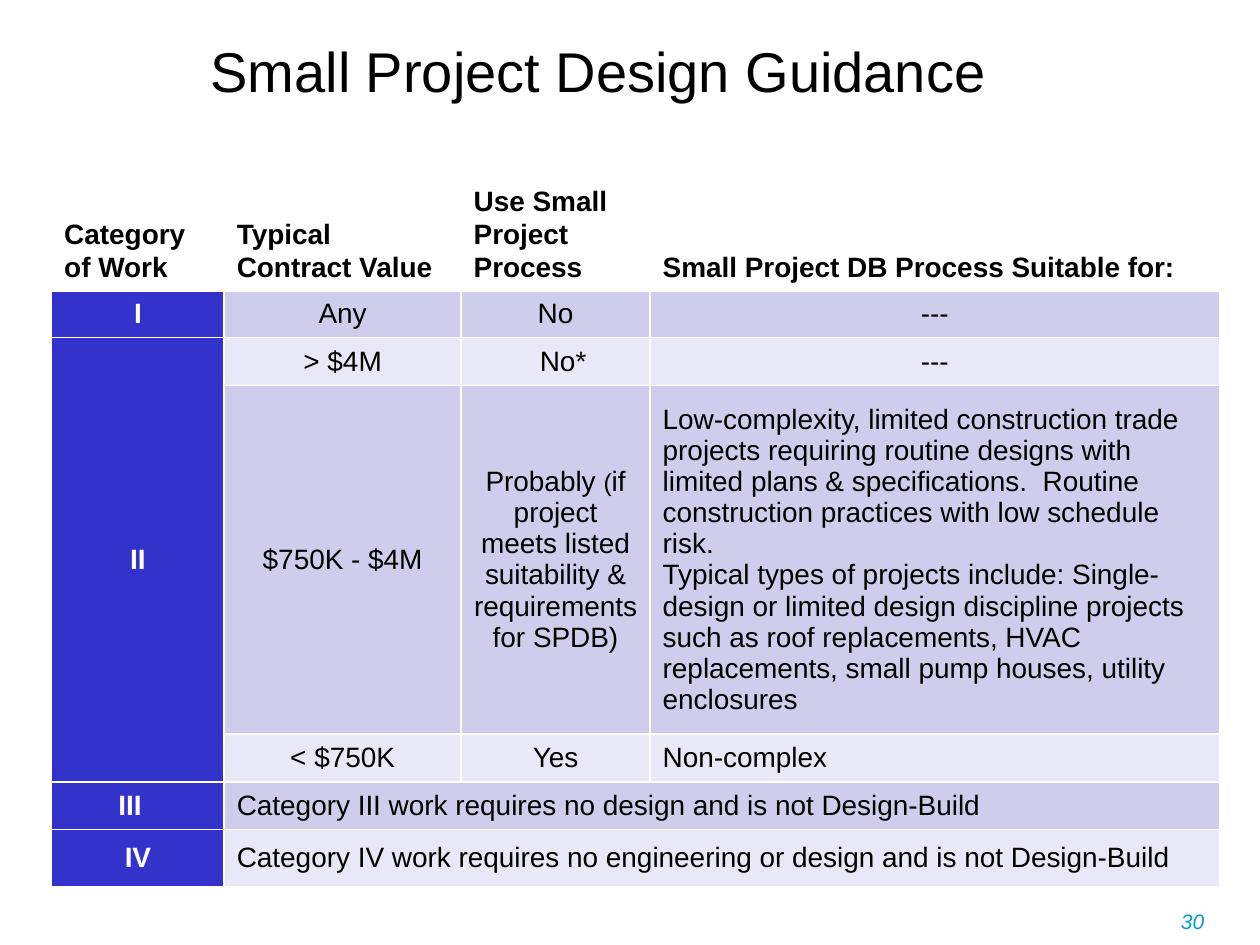
from lxml import etree
from pptx import Presentation
from pptx.dml.color import RGBColor as Rgb
from pptx.enum.text import MSO_ANCHOR as Anchor, PP_ALIGN as Align
from pptx.oxml.ns import qn
from pptx.util import Inches, Pt

BLACK = Rgb(0, 0, 0)
WHITE = Rgb(255, 255, 255)
BLUE = Rgb(0x33, 0x33, 0xCC)
DARK = Rgb(0xCE, 0xCE, 0xEC)
LIGHT = Rgb(0xE8, 0xE8, 0xF6)
CYAN = Rgb(0x00, 0x9E, 0xD5)

COLS = [1.37, 1.88, 1.5, 4.52]
ROWS = [0.97, 0.38, 0.38, 2.43, 0.38, 0.38, 0.45]
HEADS = ["Category of Work", "Typical Contract Value",
         "Use Small Project Process", "Small Project DB Process Suitable for:"]
PROBABLY = [["Probably ", ("(", 14),
             "if project meets listed suitability & requirements for SPDB)"]]
SUITABLE = [
    "Low-complexity, limited construction trade projects requiring routine designs "
    "with limited plans & specifications.  Routine construction practices with low "
    "schedule risk.",
    "Typical types of projects include: Single-design or limited design discipline "
    "projects such as roof replacements, HVAC replacements, small pump houses, "
    "utility enclosures",
]
BODY = [
    ["I", "Any", "No", "---"],
    ["II", "> $4M", "No*", "---"],
    [None, "$750K - $4M", PROBABLY, SUITABLE],
    [None, "< $750K", "Yes", "Non-complex"],
    ["III", "Category III work requires no design and is not Design-Build"],
    ["IV", "Category IV work requires no engineering or design and is not Design-Build"],
]
INDENTS = {"III": 0.43, "No*": 0.12}


def write(frame, text, size=16, color=BLACK, bold=False, italic=False,
          align=Align.LEFT, spacing=None):
    paras = [text] if isinstance(text, str) else text
    for i, para in enumerate(paras):
        line = frame.add_paragraph() if i else frame.paragraphs[0]
        line.alignment = align
        if spacing:
            line.line_spacing = spacing
        for part in [para] if isinstance(para, str) else para:
            words, points = (part, size) if isinstance(part, str) else part
            run = line.add_run()
            run.text = words
            font = run.font
            font.name, font.size = "Arial", Pt(points)
            font.bold, font.italic = bold, italic
            font.color.rgb = color


def place(shape, left, top, width, height):
    shape.left, shape.top = Inches(left), Inches(top)
    shape.width, shape.height = Inches(width), Inches(height)


def add_title(slide, *box):
    title = slide.shapes.title
    place(title, *box)
    title.text_frame.vertical_anchor = Anchor.MIDDLE
    write(title.text_frame, "Small Project Design Guidance", size=32,
          align=Align.CENTER)


def add_number(slide, *box):
    label = slide.shapes.add_textbox(*map(Inches, box))
    label.text_frame.word_wrap = True
    write(label.text_frame, "30", size=12, color=CYAN, italic=True,
          align=Align.CENTER)


def add_borders(cell, bottom):
    props = cell._tc.get_or_add_tcPr()
    for side, width in zip("LRTB", (1, 1, 1, bottom)):
        line = etree.SubElement(props, qn("a:ln" + side), w=str(Pt(width)))
        fill = etree.SubElement(line, qn("a:solidFill"))
        etree.SubElement(fill, qn("a:srgbClr"), val=str(WHITE))


def add_grid(slide, *box):
    grid = slide.shapes.add_table(len(ROWS), len(COLS), *map(Inches, box)).table
    grid.first_row = grid.horz_banding = False
    for col, width in zip(grid.columns, COLS):
        col.width = Inches(width)
    for row, height in zip(grid.rows, ROWS):
        row.height = Inches(height)
    for r in range(len(ROWS)):
        for c in range(len(COLS)):
            cell = grid.cell(r, c)
            add_borders(cell, 1 if r else 3)
            if r:
                cell.fill.solid()
                band = DARK if r % 2 else LIGHT
                cell.fill.fore_color.rgb = band if c else BLUE
            else:
                cell.fill.background()
    grid.cell(2, 0).merge(grid.cell(4, 0))
    for r in (5, 6):
        grid.cell(r, 1).merge(grid.cell(r, 3))
    for c, text in enumerate(HEADS):
        cell = grid.cell(0, c)
        cell.vertical_anchor = Anchor.BOTTOM
        write(cell.text_frame, text, bold=True, spacing=1.07)
    for r, texts in enumerate(BODY, 1):
        for c, text in enumerate(texts):
            if text is None:
                continue
            cell = grid.cell(r, c)
            cell.vertical_anchor = Anchor.MIDDLE
            if isinstance(text, str) and text in INDENTS:
                cell.margin_left = Inches(0.1 + INDENTS[text])
            left = text == "III" or c and r > 4 or c == 3 and r > 2
            write(cell.text_frame, text, bold=c == 0,
                  color=BLACK if c else WHITE,
                  align=Align.LEFT if left else Align.CENTER)


def main():
    deck = Presentation()
    deck.slide_width, deck.slide_height = Inches(10), Inches(7.5)
    slide = deck.slides.add_slide(deck.slide_layouts[5])
    add_number(slide, 8.93, 7.16, 1.07, 0.34)
    add_title(slide, 0.92, 0.1, 7.66, 0.91)
    add_grid(slide, 0.41, 1.33, sum(COLS), sum(ROWS))
    deck.save("out.pptx")


if __name__ == "__main__":
    main()
